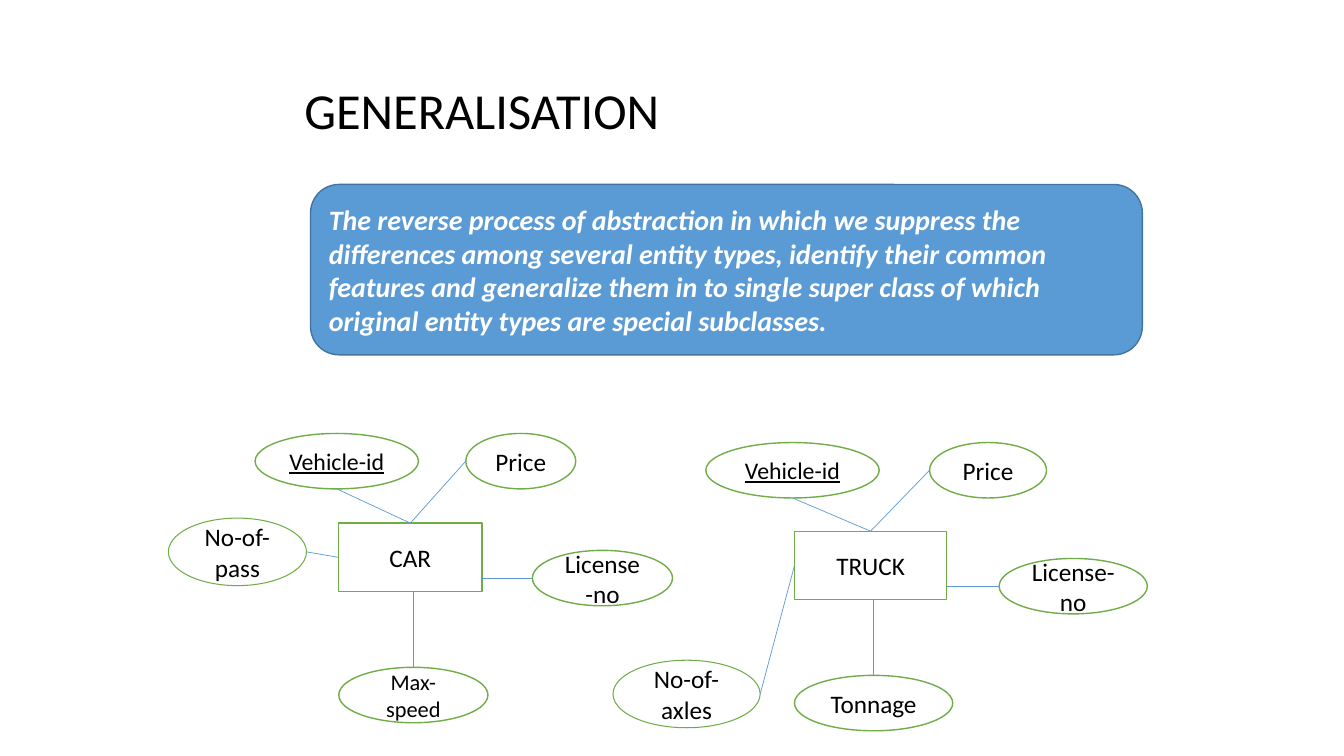
"""Build the generalisation slide with entity diagrams for a car and a truck."""
import pptx
import pptx.dml.color
import pptx.enum.shapes
import pptx.enum.text
import pptx.oxml
import pptx.oxml.ns
import pptx.util
from dataclasses import dataclass

Inches = pptx.util.Inches
Shape = pptx.enum.shapes.MSO_SHAPE
Align = pptx.enum.text.PP_ALIGN


@dataclass(frozen=True)
class Theme:
    font: str = "Calibri"
    ink: str = "000000"
    paper: str = "FFFFFF"
    blue: str = "5B9BD5"
    dark_blue: str = "43739E"
    green: str = "70AD47"
    title_size: int = 36
    definition_size: int = 20
    label_size: int = 18
    key_size: int = 17
    small_size: int = 16
    outline: float = 1
    thin_outline: float = 0.75
    link: float = 0.5


THEME = Theme()
TITLE = "GENERALISATION"
TITLE_BOX = (2.92, 0.4, 9.5, 1.45)
DEFINITION = (
    "The reverse process of abstraction in which we suppress the differences among "
    "several entity types, identify their common features and generalize them in to "
    "single super class of which original entity types are special subclasses."
)
DEFINITION_BOX = (3.08, 1.83, 8.25, 1.69)

ENTITIES = [
    ("CAR", (3.36, 5.19, 1.42, 0.68), [
        ("Vehicle-id", "key", (2.53, 4.3, 1.62, 0.55), THEME.key_size),
        ("Price", "price", (4.62, 4.3, 1.09, 0.55), THEME.label_size),
        ("License-no", "license", (5.28, 5.46, 1.39, 0.55), THEME.label_size),
        ("Max-speed", "limit", (3.36, 6.62, 1.48, 0.55), THEME.small_size),
        ("No-of-pass", "count", (1.67, 5.14, 1.37, 0.67), THEME.label_size),
    ]),
    ("TRUCK", (7.88, 5.27, 1.51, 0.68), [
        ("Vehicle-id", "key", (7, 4.39, 1.72, 0.55), THEME.key_size),
        ("Price", "price", (9.22, 4.39, 1.16, 0.55), THEME.label_size),
        ("License-no", "license", (9.91, 5.54, 1.47, 0.55), THEME.label_size),
        ("Tonnage", "limit", (7.88, 6.7, 1.57, 0.55), THEME.label_size),
        ("No-of-axles", "count", (6.08, 6.55, 1.46, 0.67), THEME.label_size),
    ]),
]

SIDES = {"top": 0, "left": 1, "bottom": 2, "right": 3}
LINKS = {
    "key": ("top", "bottom"),
    "price": ("top", "left"),
    "license": ("right", "left"),
    "limit": ("bottom", "top"),
    "count": ("left", "right"),
}


def color(value):
    return pptx.dml.color.RGBColor.from_string(value)


def middle(box, side):
    left, top, width, height = box
    return {
        "top": (left + width / 2, top),
        "left": (left, top + height / 2),
        "bottom": (left + width / 2, top + height),
        "right": (left + width, top + height / 2),
    }[side]


def write(shape, text, size, ink, align=Align.CENTER, **style):
    frame = shape.text_frame
    frame.text = text
    frame.word_wrap = True
    frame.vertical_anchor = pptx.enum.text.MSO_ANCHOR.MIDDLE
    para = frame.paragraphs[0]
    para.alignment = align
    font = para.runs[0].font
    font.name = THEME.font
    font.size = pptx.util.Pt(size)
    font.color.rgb = color(ink)
    for name, value in style.items():
        setattr(font, name, value)
    return para


def add_box(shapes, kind, box, fill, line, width):
    shape = shapes.add_shape(kind, *map(Inches, box))
    shape.shadow.inherit = False
    if fill:
        shape.fill.solid()
        shape.fill.fore_color.rgb = color(fill)
    else:
        shape.fill.background()
    shape.line.color.rgb = color(line)
    shape.line.width = pptx.util.Pt(width)
    return shape


def add_link(shapes, entity, entity_box, oval_box, role):
    entity_side, oval_side = LINKS[role]
    start_x, start_y = middle(entity_box, entity_side)
    end_x, end_y = middle(oval_box, oval_side)
    if role == "license":
        start_y = end_y
    if role == "limit":
        start_x = end_x
    link = shapes.add_connector(
        pptx.enum.shapes.MSO_CONNECTOR.STRAIGHT,
        *map(Inches, (start_x, start_y, end_x, end_y)),
    )
    link.line.color.rgb = color(THEME.blue)
    link.line.width = pptx.util.Pt(THEME.link)
    effects = pptx.oxml.parse_xml(f"<a:effectLst {pptx.oxml.ns.nsdecls('a')}/>")
    link._element.spPr.append(effects)
    if role not in ("license", "limit"):
        link.begin_connect(entity, SIDES[entity_side])


def add_entity(page, name, entity_box, attributes):
    shapes = page.shapes.add_group_shape().shapes
    entity = add_box(shapes, Shape.RECTANGLE, entity_box, THEME.paper, THEME.green, THEME.outline)
    write(entity, name, THEME.label_size, THEME.ink)
    for label, role, box, size in attributes:
        fill, width = (None, THEME.thin_outline) if role == "count" else (THEME.paper, THEME.outline)
        oval = add_box(shapes, Shape.OVAL, box, fill, THEME.green, width)
        write(oval, label, size, THEME.ink, underline=role == "key")
        add_link(shapes, entity, entity_box, box, role)


def main():
    deck = pptx.Presentation()
    deck.slide_width, deck.slide_height = Inches(13.33), Inches(7.5)
    page = deck.slides.add_slide(deck.slide_layouts[6])
    title = page.shapes.add_textbox(*map(Inches, TITLE_BOX))
    write(title, TITLE, THEME.title_size, THEME.ink, Align.LEFT).line_spacing = 0.9
    definition = add_box(
        page.shapes, Shape.ROUNDED_RECTANGLE, DEFINITION_BOX,
        THEME.blue, THEME.dark_blue, THEME.outline,
    )
    write(definition, DEFINITION, THEME.definition_size, THEME.paper, Align.LEFT, bold=True, italic=True)
    for name, box, attributes in ENTITIES:
        add_entity(page, name, box, attributes)
    deck.save("out.pptx")


if __name__ == "__main__":
    main()
